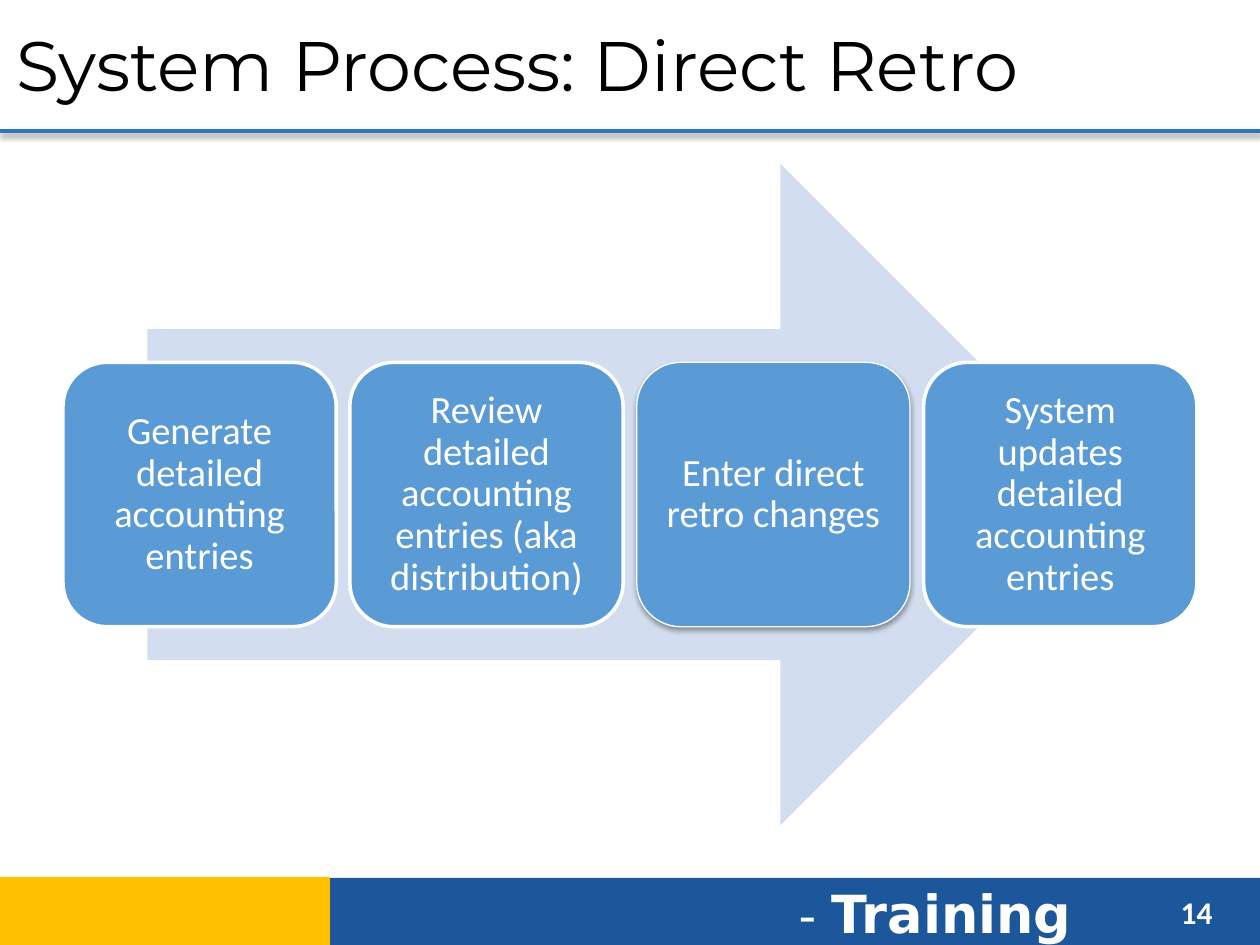
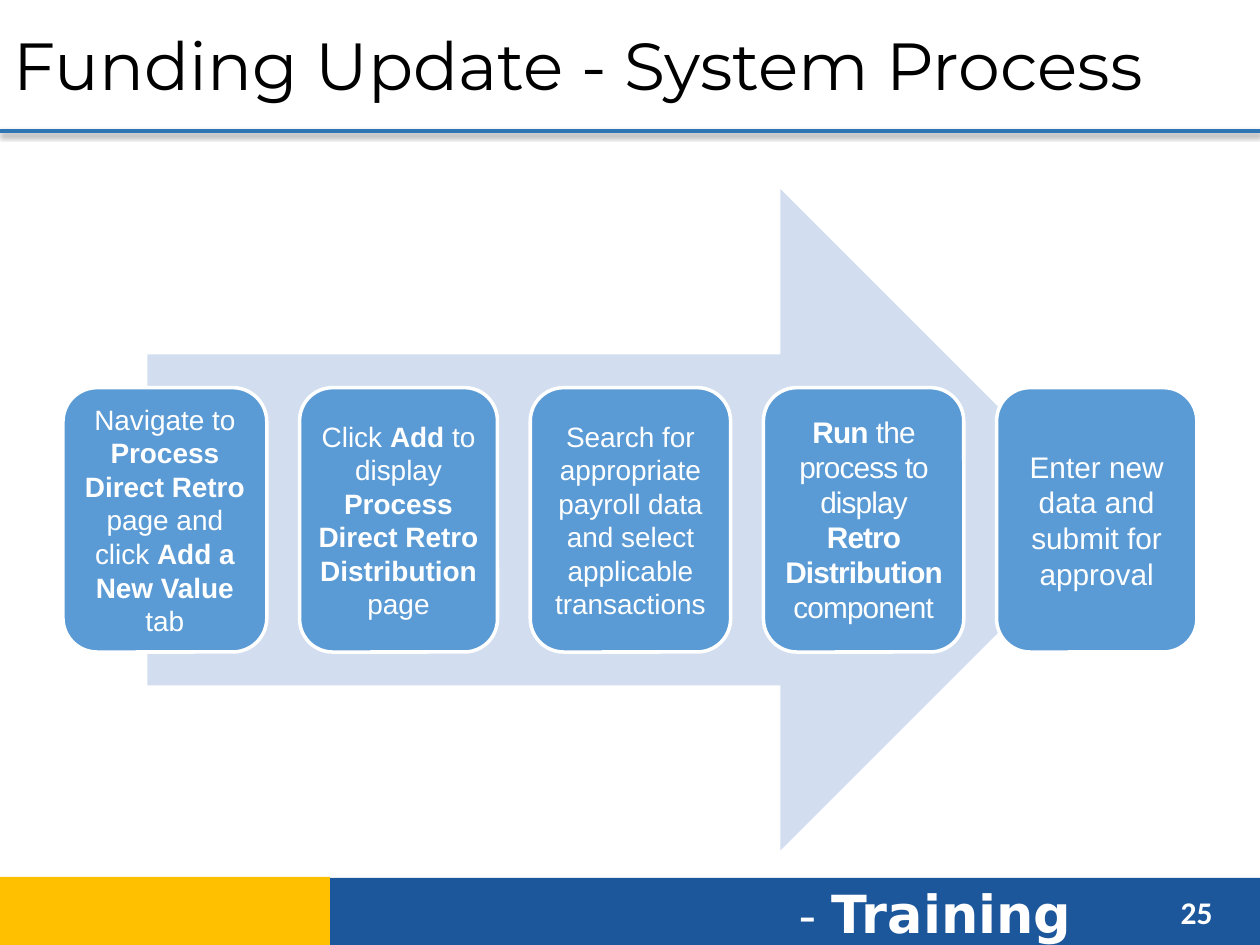
"""Build two process slides that share a title rule, an arrow and a footer."""
from dataclasses import dataclass
from typing import NamedTuple, Optional

from lxml.etree import SubElement
from pptx import Presentation
from pptx.dml.color import RGBColor
from pptx.enum.shapes import MSO_CONNECTOR, MSO_SHAPE
from pptx.enum.text import MSO_ANCHOR, PP_ALIGN
from pptx.oxml.ns import qn
from pptx.util import Cm, Pt

HUES = {
    "navy": "1D579B",
    "gold": "FFC000",
    "rule": "2E75B6",
    "arrow": "D2DEEF",
    "card": "5B9BD5",
    "white": "FFFFFF",
    "black": "000000",
}
WIDE, TALL = 25.4, 19.05
EDGE = 1.27
CARD_TALL = 5.33
ARROW_TALL = 13.34


class Box(NamedTuple):
    left: float
    top: float
    width: float
    height: float


class Shade(NamedTuple):
    alpha: int
    blur: float
    drop: float


class Bit(NamedTuple):
    text: str
    bold: bool = False
    size: Optional[float] = None


@dataclass
class Style:
    font: str
    size: float
    hue: str = "white"
    align: PP_ALIGN = PP_ALIGN.LEFT
    anchor: MSO_ANCHOR = MSO_ANCHOR.TOP
    inset: Optional[float] = None
    lead: Optional[object] = None
    track: int = 0


@dataclass
class Card:
    width: float
    bits: list[Bit]
    style: Style
    line: float = 2
    shade: Optional[Shade] = None


@dataclass
class Page:
    title: str
    size: float
    left: float
    number: int
    top: float
    cards: list[Card]


def tint(name: str) -> RGBColor:
    """Return a named colour."""
    return RGBColor.from_string(HUES[name])


def set_shade(item, shade: Optional[Shade]) -> None:
    """Replace the theme shadow with the given one, or with none."""
    effects = SubElement(item._element.spPr, qn("a:effectLst"))
    if shade:
        outer = SubElement(effects, qn("a:outerShdw"), blurRad=str(Pt(shade.blur)),
                           dist=str(Pt(shade.drop)), dir="5400000", rotWithShape="0")
        color = SubElement(outer, qn("a:srgbClr"), val=HUES["black"])
        SubElement(color, qn("a:alpha"), val=str(shade.alpha * 1000))


def write(frame, bits: list[Bit], style: Style) -> None:
    """Fill a text frame run by run."""
    frame.word_wrap = True
    frame.vertical_anchor = style.anchor
    if style.inset is not None:
        frame.margin_left = frame.margin_right = Cm(style.inset)
        frame.margin_top = frame.margin_bottom = Cm(style.inset)
    para = frame.paragraphs[0]
    para.alignment = style.align
    if style.lead is not None:
        para.line_spacing = style.lead
    for bit in bits:
        run = para.add_run()
        run.text = bit.text
        run.font.name = style.font
        run.font.size = Pt(bit.size or style.size)
        run.font.bold = bit.bold
        run.font.color.rgb = tint(style.hue)
        if style.track:
            run._r.get_or_add_rPr().set("spc", str(style.track))


def add_text(slide, box: Box, bits: list[Bit], style: Style) -> None:
    """Add a text box."""
    area = slide.shapes.add_textbox(*map(Cm, box))
    write(area.text_frame, bits, style)


def add_form(slide, kind: MSO_SHAPE, box: Box, hue: str, line: float = 0,
             shade: Optional[Shade] = None):
    """Add a filled preset shape, with a white outline if line is set."""
    form = slide.shapes.add_shape(kind, *map(Cm, box))
    form.fill.solid()
    form.fill.fore_color.rgb = tint(hue)
    if line:
        form.line.color.rgb = tint("white")
        form.line.width = Pt(line)
    else:
        form.line.fill.background()
    set_shade(form, shade)
    return form


def add_frame(slide, page: Page) -> None:
    """Draw the footer, the title and the rule below it."""
    add_form(slide, MSO_SHAPE.RECTANGLE, Box(6.63, 17.7, 18.77, 1.4), "navy")
    add_text(slide, Box(15.85, 17.63, 7.11, 1.55),
             [Bit("- ", size=28), Bit("Training", True)], Style("DejaVu Sans", 30))
    rule = slide.shapes.add_connector(MSO_CONNECTOR.STRAIGHT, Cm(0), Cm(2.64), Cm(WIDE), Cm(2.64))
    rule.line.color.rgb = tint("rule")
    rule.line.width = Pt(2.25)
    set_shade(rule, Shade(38, 3.1, 1.6))
    add_text(slide, Box(23.55, 17.88, 1.52, 1.02),
             [Bit(str(page.number), True)], Style("Calibri", 18))
    add_form(slide, MSO_SHAPE.RECTANGLE, Box(-0.03, 17.68, 6.68, 1.4), "gold")
    add_text(slide, Box(page.left, 0.1, WIDE - 0.1, 2.36), [Bit(page.title)],
             Style("Montserrat", page.size, "black", anchor=MSO_ANCHOR.MIDDLE))


def add_cards(slide, page: Page) -> None:
    """Spread the cards with equal gaps across the middle of the arrow."""
    add_form(slide, MSO_SHAPE.RIGHT_ARROW, Box(2.97, page.top, 19.43, ARROW_TALL), "arrow")
    total = sum(card.width for card in page.cards)
    gap = (WIDE - 2 * EDGE - total) / (len(page.cards) - 1)
    left, top = EDGE, page.top + (ARROW_TALL - CARD_TALL) / 2
    for card in page.cards:
        form = add_form(slide, MSO_SHAPE.ROUNDED_RECTANGLE,
                        Box(left, top, card.width, CARD_TALL), "card", card.line, card.shade)
        write(form.text_frame, card.bits, card.style)
        left += card.width + gap


def mid(font: str, size: float, inset: float, lead=None, track: int = 0) -> Style:
    """Return a centred card style."""
    return Style(font, size, "white", PP_ALIGN.CENTER, MSO_ANCHOR.MIDDLE, inset, lead, track)


RETRO = mid("Calibri", 22, 0.23, 0.9)
SMALL = mid("Arial", 16, 0.18)
LARGE = mid("Arial", 17, 0.18)
TIGHT = mid("Arial", 17, 0.18, Pt(20), -50)

PAGES = [
    Page("System Process: Direct Retro", 40, 0.08, 14, 3.3, [
        Card(5.51, [Bit("Generate detailed accounting entries")], RETRO),
        Card(5.51, [Bit("Review detailed accounting entries (aka distribution)")], RETRO),
        Card(5.51, [Bit("Enter direct retro changes")], RETRO, 0.75, Shade(35, 3.1, 1.8)),
        Card(5.51, [Bit("System updates detailed accounting entries")], RETRO),
    ]),
    Page("Funding Update - System Process", 38, 0.03, 25, 3.81, [
        Card(4.11, [Bit("Navigate to "), Bit("Process Direct Retro ", True),
                    Bit("page and click "), Bit("Add a New Value ", True),
                    Bit("tab")], SMALL),
        Card(3.99, [Bit("Click "), Bit("Add ", True), Bit("to display "),
                    Bit("Process Direct Retro Distribution ", True), Bit("page")], SMALL),
        Card(4.04, [Bit("Search for appropriate payroll data and select "
                        "applicable transactions")], SMALL),
        Card(4.04, [Bit("Run", True), Bit(" the process to display "),
                    Bit("Retro Distribution ", True), Bit("component")], TIGHT),
        Card(4.04, [Bit("Enter new data and submit for approval")], LARGE),
    ]),
]


def main() -> None:
    """Build and save the slides."""
    deck = Presentation()
    deck.slide_width, deck.slide_height = Cm(WIDE), Cm(TALL)
    for page in PAGES:
        slide = deck.slides.add_slide(deck.slide_layouts[6])
        add_frame(slide, page)
        add_cards(slide, page)
    deck.save("out.pptx")


if __name__ == "__main__":
    main()
